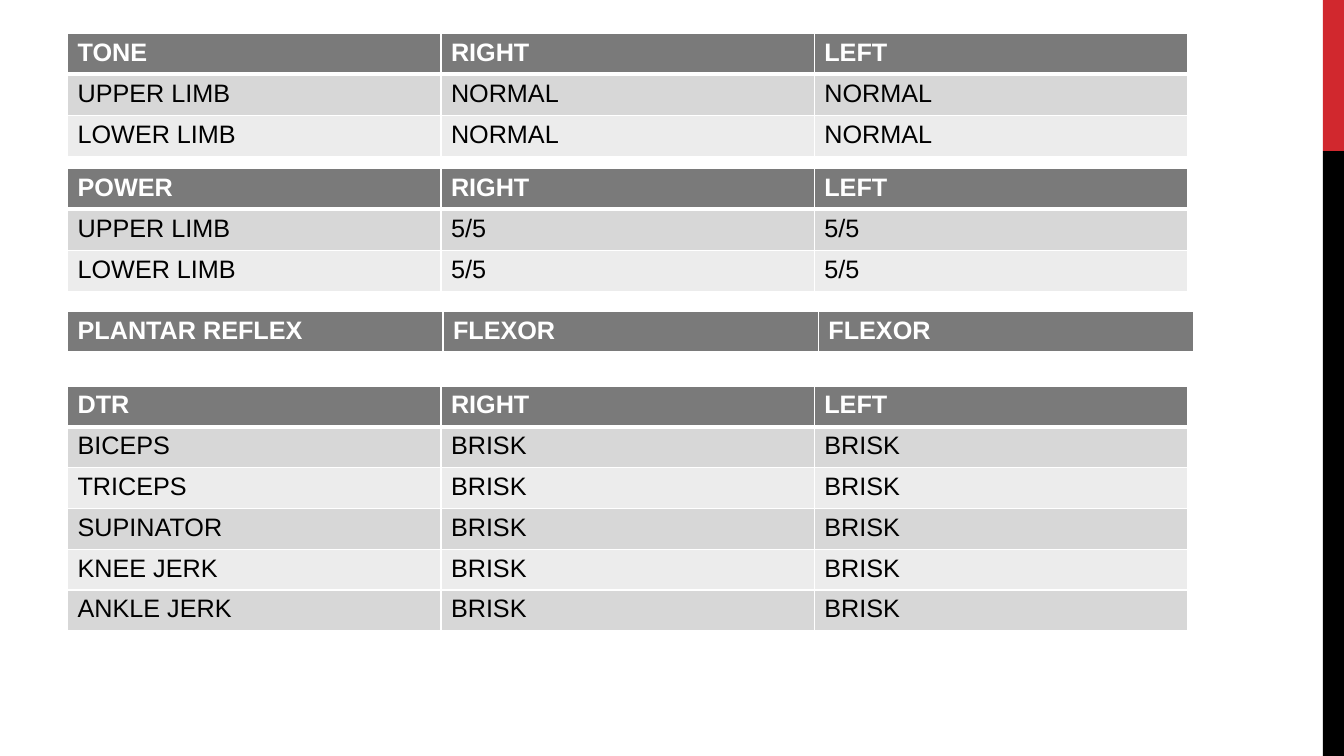
from lxml import etree
from pptx import Presentation
from pptx.dml.color import RGBColor
from pptx.enum.shapes import MSO_SHAPE
from pptx.oxml.ns import qn
from pptx.util import Inches, Pt

RECTANGLE = MSO_SHAPE.RECTANGLE
FONT = "Arial"
COLORS = {
    "red": "D1282E",
    "black": "000000",
    "white": "FFFFFF",
    "header": "7A7A7A",
    "odd_row": "D7D7D7",
    "even_row": "ECECEC",
}

SIDES = ["RIGHT", "LEFT"]
TONE = [["TONE", *SIDES]] + [
    [limb, "NORMAL", "NORMAL"] for limb in ("UPPER LIMB", "LOWER LIMB")
]
POWER = [["POWER", *SIDES]] + [
    [limb, "5/5", "5/5"] for limb in ("UPPER LIMB", "LOWER LIMB")
]
TENDON_REFLEXES = [["DTR", *SIDES]] + [
    [reflex, "BRISK", "BRISK"]
    for reflex in ("BICEPS", "TRICEPS", "SUPINATOR", "KNEE JERK", "ANKLE JERK")
]
PLANTAR_REFLEX = [["PLANTAR REFLEX", "FLEXOR", "FLEXOR"]]


def rgb(name):
    return RGBColor.from_string(COLORS[name])


def write_text(frame, text, size=18, color="black", bold=False):
    run = frame.paragraphs[0].add_run()
    run.text = text
    run.font.name = FONT
    run.font.size = Pt(size)
    run.font.bold = bold
    run.font.color.rgb = rgb(color)


def add_borders(cell, **widths):
    """Draw white cell borders; widths are in points, keyed L, R, T, B."""
    properties = cell._tc.get_or_add_tcPr()
    for side, width in widths.items():
        line = etree.SubElement(properties, qn(f"a:ln{side}"), w=str(Pt(width)))
        fill = etree.SubElement(line, qn("a:solidFill"))
        etree.SubElement(fill, qn("a:srgbClr"), val=COLORS["white"])


def add_finding_table(slide, rows, left, top, width, height):
    """Table with a dark header row and banded rows, filling the given box."""
    columns = len(rows[0])
    table = slide.shapes.add_table(
        len(rows), columns,
        Inches(left), Inches(top), Inches(width), Inches(height),
    ).table
    for column in table.columns:
        column.width = Inches(width / columns)
    for r, row in enumerate(rows):
        is_header = r == 0
        band = "header" if is_header else "odd_row" if r % 2 else "even_row"
        table.rows[r].height = Inches(height / len(rows))
        for c, text in enumerate(row):
            cell = table.cell(r, c)
            add_borders(cell, L=1, R=1, T=3 if r == 1 else 1,
                        B=3 if is_header else 1)
            cell.fill.solid()
            cell.fill.fore_color.rgb = rgb(band)
            write_text(cell.text_frame, text, bold=is_header,
                       color="white" if is_header else "black")


def add_side_band(slide, left, top, width, height):
    """Red over black strip, one fifth red."""
    red_height = height / 5
    for color, y, part_height in (
        ("red", top, red_height),
        ("black", top + red_height, height - red_height),
    ):
        strip = slide.shapes.add_shape(
            RECTANGLE, Inches(left), Inches(y), Inches(width), Inches(part_height)
        )
        strip.shadow.inherit = False
        strip.fill.solid()
        strip.fill.fore_color.rgb = rgb(color)
        strip.line.fill.background()


def main():
    deck = Presentation()
    deck.slide_width, deck.slide_height = Inches(13.33), Inches(7.5)
    slide = deck.slides.add_slide(deck.slide_layouts[6])

    # Strip on the right edge
    add_side_band(slide, 13.12, 0, 0.21, 7.5)

    # Examination findings
    left, width = 0.67, 11.11
    add_finding_table(slide, TONE, left, 0.33, width, 1.22)
    add_finding_table(slide, POWER, left, 1.67, width, 1.22)
    add_finding_table(slide, TENDON_REFLEXES, left, 3.83, width, 2.43)
    add_finding_table(slide, PLANTAR_REFLEX, left, 3.09, 11.17, 0.41)

    deck.save("out.pptx")


if __name__ == "__main__":
    main()
